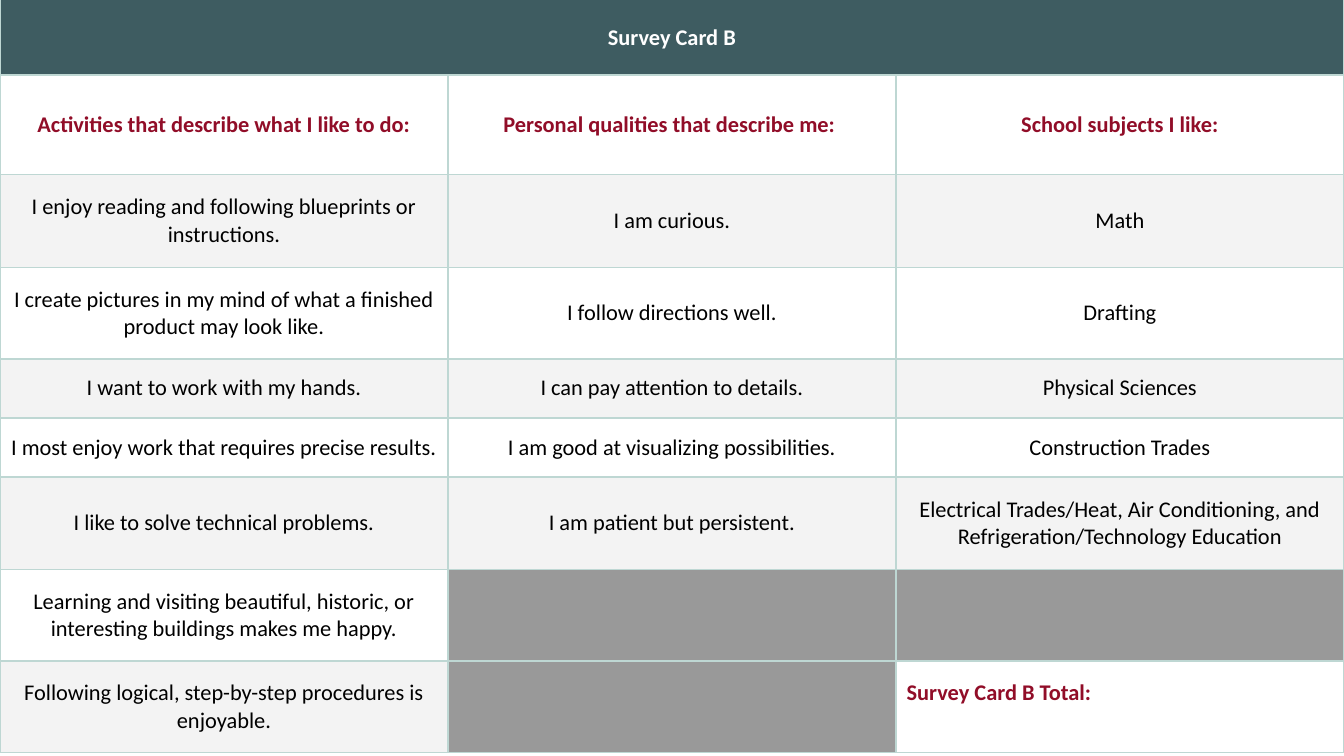
from lxml.etree import SubElement
from pptx import Presentation
from pptx.dml.color import RGBColor
from pptx.enum.text import MSO_ANCHOR, PP_ALIGN
from pptx.oxml.ns import qn
from pptx.util import Inches, Pt

TEAL = RGBColor(0x3E, 0x5C, 0x61)
MINT = RGBColor(0xBE, 0xD7, 0xD3)
RED = RGBColor(0x91, 0x0D, 0x28)
BLACK = RGBColor(0, 0, 0)
WHITE = RGBColor(0xFF, 0xFF, 0xFF)
LIGHT = RGBColor(0xF3, 0xF3, 0xF3)
GRAY = RGBColor(0x99, 0x99, 0x99)

TOTAL = "Survey Card B Total:"
ROWS = [
    ("Survey Card B", "", ""),
    ("Activities that describe what I like to do:",
     "Personal qualities that describe me: ", "School subjects I like:"),
    ("I enjoy reading and following blueprints or instructions.",
     "I am curious.", "Math"),
    ("I create pictures in my mind of what a finished product may look like.",
     "I follow directions well.", "Drafting"),
    ("I want to work with my hands.",
     "I can pay attention to details.", "Physical Sciences"),
    ("I most enjoy work that requires precise results.",
     "I am good at visualizing possibilities.", "Construction Trades"),
    ("I like to solve technical problems.", "I am patient but persistent.",
     "Electrical Trades/Heat, Air Conditioning, and "
     "Refrigeration/Technology Education"),
    ("Learning and visiting beautiful, historic, or interesting buildings "
     "makes me happy.", "", ""),
    ("Following logical, step-by-step procedures is enjoyable.", "", TOTAL),
]
HEIGHTS = [0.58, 0.74, 0.69, 0.68, 0.44, 0.44, 0.69, 0.68, 0.68]


def add_borders(cell):
    tcPr = cell._tc.get_or_add_tcPr()
    for side in ("lnL", "lnR", "lnT", "lnB"):
        ln = SubElement(tcPr, qn(f"a:{side}"), w=str(Pt(1)))
        fill = SubElement(ln, qn("a:solidFill"))
        SubElement(fill, qn("a:srgbClr"), val=str(MINT))


# Widescreen 16:9 slide
prs = Presentation()
prs.slide_width, prs.slide_height = Inches(10), Inches(10 * 9 / 16)
s = prs.slides.add_slide(prs.slide_layouts[6])

# Survey table
table = s.shapes.add_table(len(ROWS), 3, Inches(0), Inches(-0.02),
                           Inches(10), Inches(sum(HEIGHTS))).table
for row, height in zip(table.rows, HEIGHTS):
    row.height = Inches(height)

for i, texts in enumerate(ROWS):
    for j, text in enumerate(texts):
        cell = table.cell(i, j)
        add_borders(cell)
        cell.vertical_anchor = MSO_ANCHOR.MIDDLE
        cell.margin_left = cell.margin_right = Inches(0.08)
        cell.margin_top = cell.margin_bottom = Inches(0.08)

        # Title bar, gray unused cells, then banded rows
        cell.fill.solid()
        if i == 0:
            cell.fill.fore_color.rgb = TEAL
        elif not text:
            cell.fill.fore_color.rgb = GRAY
        else:
            banded = i % 2 == 0 and text != TOTAL
            cell.fill.fore_color.rgb = LIGHT if banded else WHITE
        if not text:
            continue

        cell.text = text
        p = cell.text_frame.paragraphs[0]
        p.alignment = PP_ALIGN.CENTER
        p.font.name = "Calibri"
        p.font.size = Pt(12)
        p.font.bold = i < 2 or text == TOTAL
        p.font.color.rgb = BLACK
        if i == 0:
            p.font.color.rgb = WHITE
            p.line_spacing = 1.15
            p.space_after = Pt(6)
        elif p.font.bold:
            p.font.color.rgb = RED
            p.space_before = Pt(10)
        if text == TOTAL:
            p.alignment = PP_ALIGN.LEFT
            cell.margin_bottom = Inches(0.29)

# Title spans all columns
table.cell(0, 0).merge(table.cell(0, 2))

prs.save("out.pptx")
